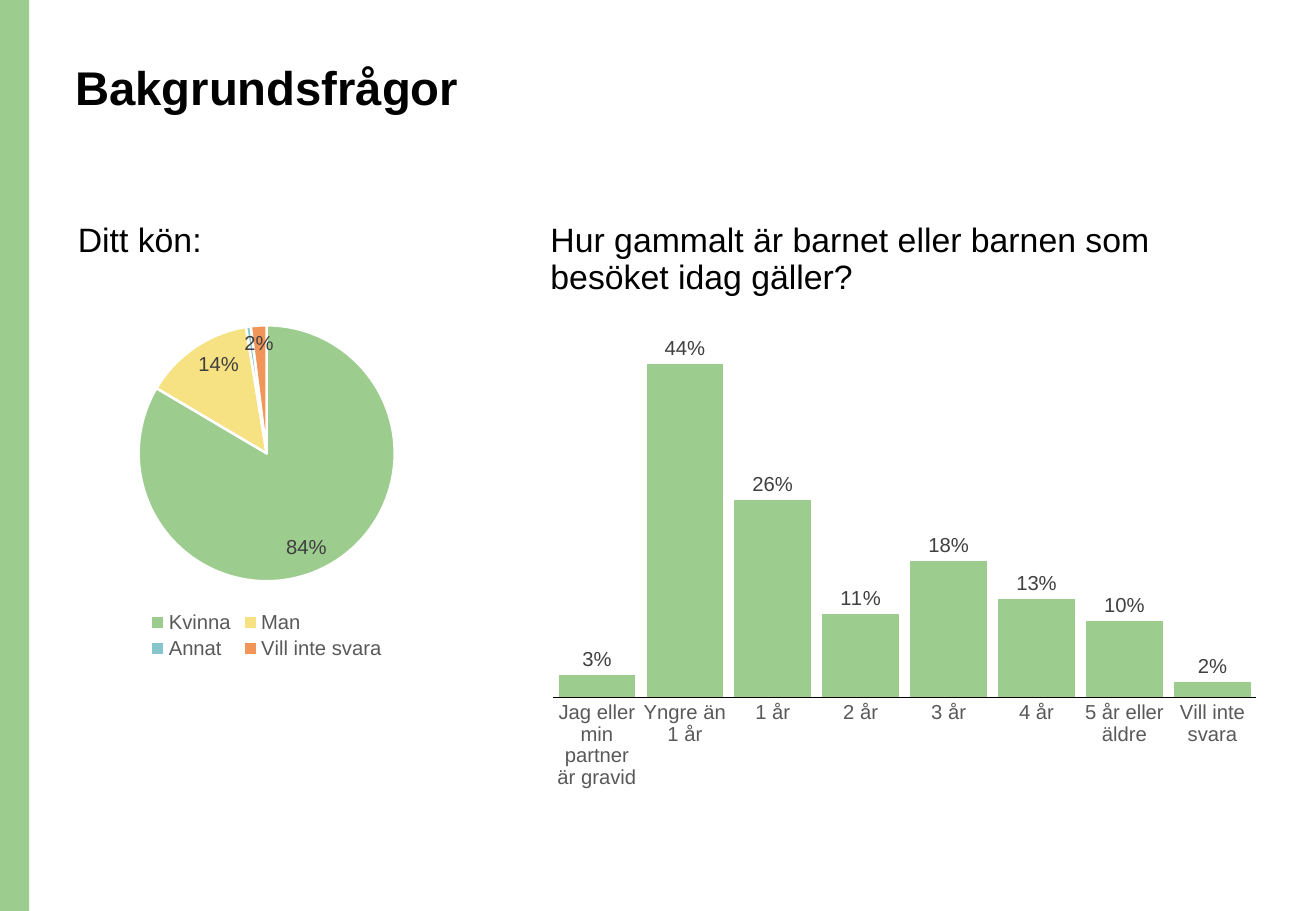
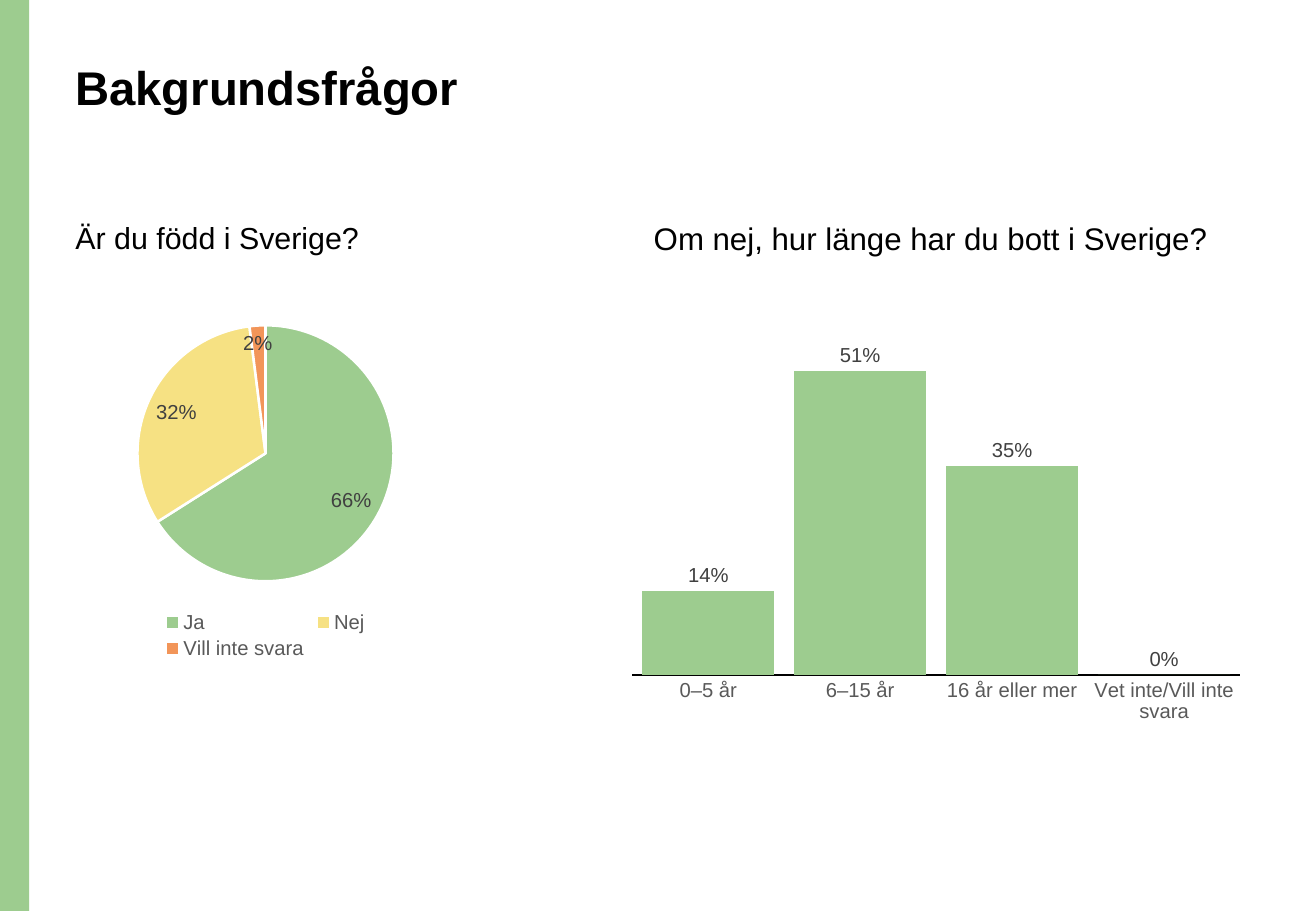
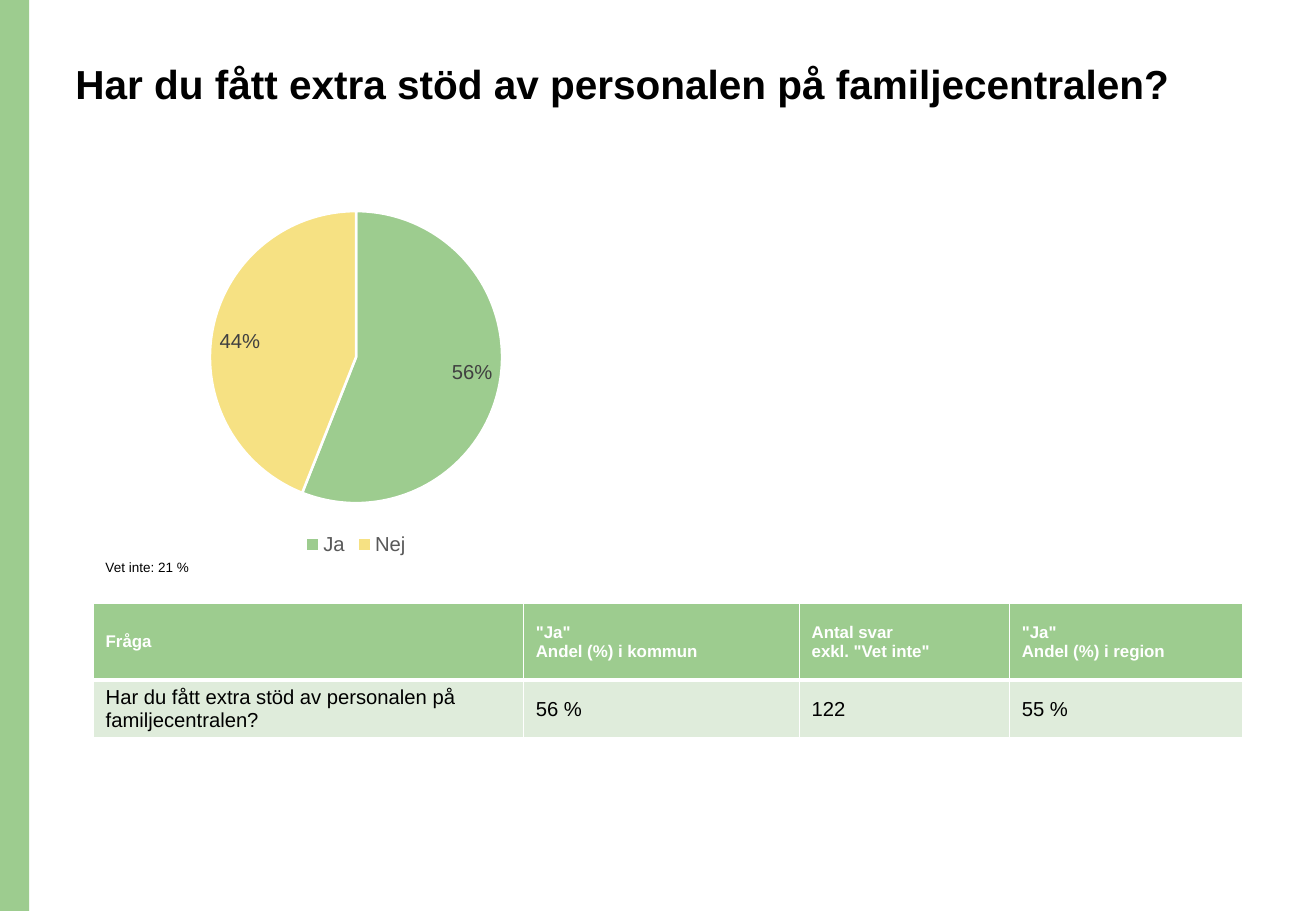
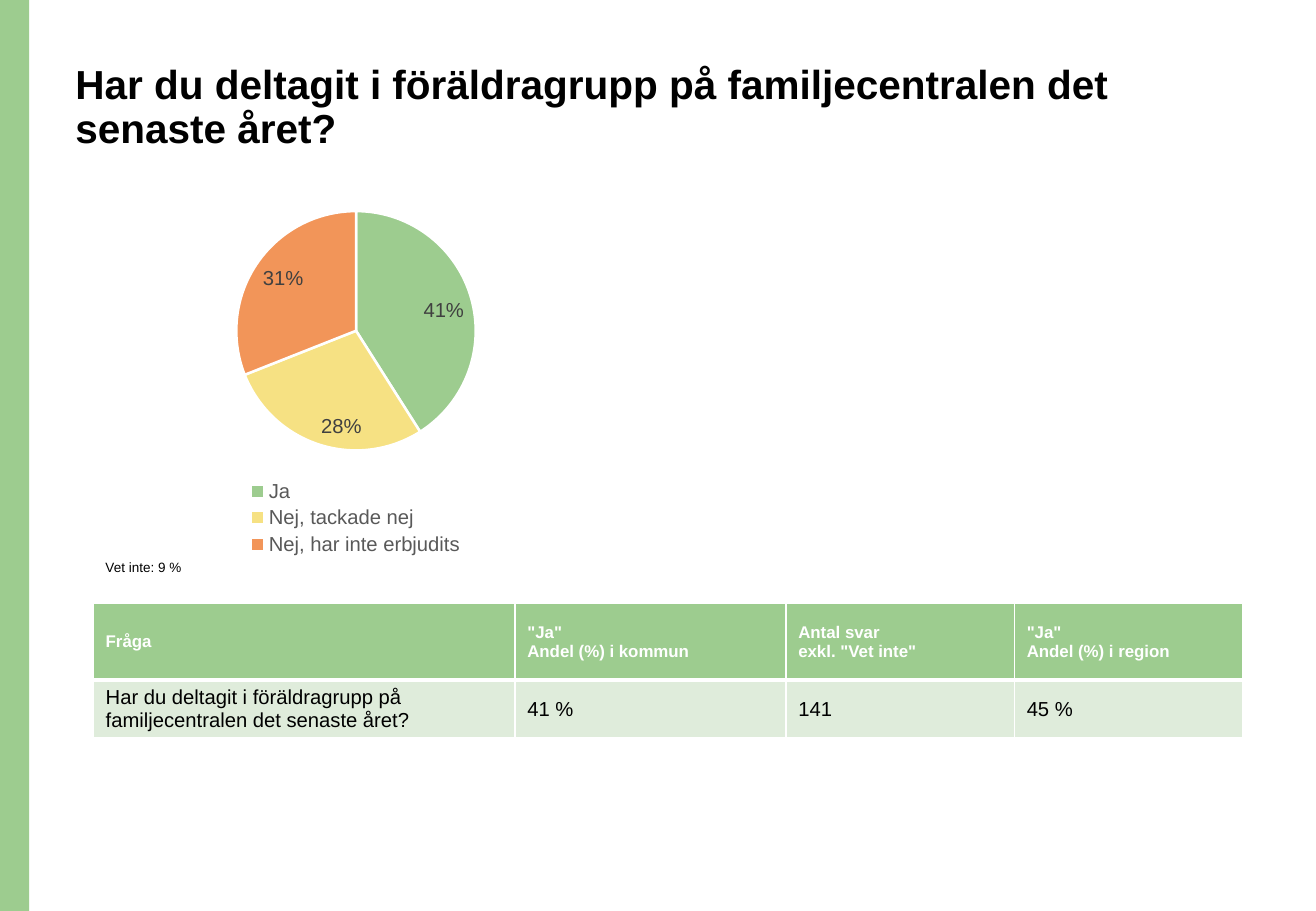
import dataclasses

import lxml.etree
import pptx
import pptx.chart.data
import pptx.dml.color
import pptx.enum.chart
import pptx.enum.shapes
import pptx.enum.text
import pptx.oxml.ns
import pptx.util


@dataclasses.dataclass(frozen=True)
class Theme:
    """Colours, font and type sizes shared by every slide."""
    font: str = "Arial"
    green: str = "9DCC8F"
    pale_green: str = "DFECDB"
    yellow: str = "F6E183"
    blue: str = "85C5CB"
    orange: str = "F29559"
    black: str = "000000"
    white: str = "FFFFFF"
    label_grey: str = "404040"
    axis_grey: str = "595959"
    title: float = 28
    long_title: float = 24
    question: float = 20
    chart_text: float = 12
    chart_base: float = 10
    table_head: float = 10
    table_body: float = 12
    note: float = 8


THEME = Theme()
EMU_PER_PX = 9144
SLIDE_SIZE = (1083, 750)
BAND_BOX = (0, 0, 24, 750)
TITLE_BOX = (52, 48, 934, 102)
COMPARISON_LAYOUT = 4
TITLE_ONLY_LAYOUT = 5
PIE_FORMAT = '[<0.01]"";[>0.01]0%'
TABLE_HEAD = ["Fråga", '"Ja"\nAndel (%) i kommun',
              'Antal svar\nexkl. "Vet inte"', '"Ja"\nAndel (%) i region']


def px(length):
    """Turn px into EMU."""
    return pptx.util.Emu(length * EMU_PER_PX)


def emu_box(box):
    """Turn a px box into EMU lengths."""
    return [px(length) for length in box]


def rgb(colour):
    """Turn a hex string into a colour."""
    return pptx.dml.color.RGBColor.from_string(colour)


def paint(fill, colour):
    """Give a fill one solid colour."""
    fill.solid()
    fill.fore_color.rgb = rgb(colour)


def style_font(font, size, colour, bold=False):
    """Set the shared typeface with a size, colour and weight."""
    font.name = THEME.font
    font.size = pptx.util.Pt(size)
    font.bold = bold
    font.color.rgb = rgb(colour)


def style_frame(frame, size, colour=THEME.black, bold=False, spacing=None, before=None):
    """Format every paragraph and run of a text frame."""
    for paragraph in frame.paragraphs:
        paragraph.alignment = pptx.enum.text.PP_ALIGN.LEFT
        paragraph.line_spacing = spacing
        if before is not None:
            paragraph.space_before = pptx.util.Pt(before)
        for run in paragraph.runs:
            style_font(run.font, size, colour, bold)


def write_text(holder, box, text, size, **style):
    """Place a text holder in its box and fill it with top-anchored text."""
    holder.left, holder.top, holder.width, holder.height = emu_box(box)
    frame = holder.text_frame
    frame.text = text
    frame.word_wrap = True
    frame.auto_size = pptx.enum.text.MSO_AUTO_SIZE.NONE
    frame.vertical_anchor = pptx.enum.text.MSO_ANCHOR.TOP
    style_frame(frame, size, **style)


def add_titled_slide(deck, layout, title, size):
    """Add a slide with the shared title style."""
    slide = deck.slides.add_slide(deck.slide_layouts[layout])
    write_text(slide.shapes.title, TITLE_BOX, title, size, bold=True, spacing=0.9)
    return slide


def move_band_to_master(deck, slide):
    """Draw the green side band and hand it to the slide master."""
    band = slide.shapes.add_shape(pptx.enum.shapes.MSO_SHAPE.RECTANGLE, *emu_box(BAND_BOX))
    band.shadow.inherit = False
    paint(band.fill, THEME.green)
    band.line.fill.background()
    band.element.nvSpPr.cNvPr.set("id", "100")
    deck.slide_master.shapes[0].element.addprevious(band.element)


def add_chart(slide, box, kind, categories, values, number_format, label_position):
    """Add a one-series chart with the shared label style."""
    data = pptx.chart.data.CategoryChartData()
    data.categories = categories
    data.add_series("Series 1", values)
    chart = slide.shapes.add_chart(kind, *emu_box(box), data).chart
    chart.has_title = False
    chart.has_legend = False
    style_font(chart.font, THEME.chart_base, THEME.black)
    plot = chart.plots[0]
    plot.has_data_labels = True
    labels = plot.data_labels
    labels.show_value = True
    labels.show_percentage = False
    labels.number_format = number_format
    labels.number_format_is_linked = False
    labels.position = label_position
    style_font(labels.font, THEME.chart_text, THEME.label_grey)
    return chart


def add_pie(slide, box, slices):
    """Add a pie of (answer, share, colour) slices with a legend below."""
    answers, shares, colours = zip(*slices)
    chart = add_chart(slide, box, pptx.enum.chart.XL_CHART_TYPE.PIE, answers, shares,
                      PIE_FORMAT, pptx.enum.chart.XL_LABEL_POSITION.INSIDE_END)
    chart.has_legend = True
    chart.legend.position = pptx.enum.chart.XL_LEGEND_POSITION.BOTTOM
    chart.legend.include_in_layout = False
    style_font(chart.legend.font, THEME.chart_text, THEME.axis_grey)
    chart.plots[0].vary_by_categories = True
    for index, colour in enumerate(colours):
        wedge = chart.plots[0].series[0].points[index].format
        paint(wedge.fill, colour)
        wedge.line.color.rgb = rgb(THEME.white)
        wedge.line.width = pptx.util.Pt(1.5)


def add_columns(slide, box, bars):
    """Add a column chart of (answer, share) bars without a value axis."""
    answers, shares = zip(*bars)
    chart = add_chart(slide, box, pptx.enum.chart.XL_CHART_TYPE.COLUMN_CLUSTERED, answers, shares,
                      "0%", pptx.enum.chart.XL_LABEL_POSITION.OUTSIDE_END)
    plot = chart.plots[0]
    plot.vary_by_categories = False
    plot.gap_width = 15
    plot.overlap = -27
    paint(plot.series[0].format.fill, THEME.green)
    chart.value_axis.visible = False
    chart.value_axis.has_major_gridlines = False
    chart.value_axis.minimum_scale = 0
    answer_axis = chart.category_axis
    answer_axis.has_major_gridlines = False
    answer_axis.major_tick_mark = pptx.enum.chart.XL_TICK_MARK.NONE
    answer_axis.format.line.color.rgb = rgb(THEME.black)
    answer_axis.format.line.width = pptx.util.Pt(0.75)
    style_font(answer_axis.tick_labels.font, THEME.chart_text, THEME.axis_grey)


def set_borders(cell, widths):
    """Give a cell white borders of the given point widths by side."""
    properties = cell._tc.get_or_add_tcPr()
    for side, width in widths.items():
        border = lxml.etree.SubElement(properties, pptx.oxml.ns.qn(f"a:ln{side}"),
                                       w=str(pptx.util.Pt(width)))
        solid = lxml.etree.SubElement(border, pptx.oxml.ns.qn("a:solidFill"))
        lxml.etree.SubElement(solid, pptx.oxml.ns.qn("a:srgbClr"), val=THEME.white)


def add_result_table(slide, box, column_widths, answers):
    """Add the table that compares municipality and region."""
    table = slide.shapes.add_table(2, len(TABLE_HEAD), *emu_box(box)).table
    table.horz_banding = False
    for column, width in zip(table.columns, column_widths):
        column.width = px(width)
    head_height = 63
    table.rows[0].height = px(head_height)
    table.rows[1].height = px(box[3] - head_height)
    row_styles = [
        (TABLE_HEAD, THEME.green, THEME.table_head, THEME.white, True, dict(L=1, R=1, T=1, B=3)),
        (answers, THEME.pale_green, THEME.table_body, THEME.black, False, dict(L=1, R=1, T=3, B=1)),
    ]
    for row, (texts, fill, size, colour, bold, borders) in zip(table.rows, row_styles):
        for cell, text in zip(row.cells, texts):
            cell.text_frame.text = text
            cell.vertical_anchor = pptx.enum.text.MSO_ANCHOR.MIDDLE
            style_frame(cell.text_frame, size, colour, bold)
            set_borders(cell, borders)
            paint(cell.fill, fill)


def build_background_slide(deck, pie, columns):
    """Build a slide with a pie question on the left and a column question on the right."""
    slide = add_titled_slide(deck, COMPARISON_LAYOUT, "Bakgrundsfrågor", THEME.title)
    left_holder, left_content, right_holder, right_content = list(slide.placeholders)[1:]
    for content in (left_content, right_content):
        content.element.getparent().remove(content.element)
    for holder, part in ((left_holder, pie), (right_holder, columns)):
        write_text(holder, part["question_box"], part["question"], part["size"],
                   spacing=0.9, before=10)
    add_pie(slide, pie["chart_box"], pie["slices"])
    add_columns(slide, columns["chart_box"], columns["bars"])
    return slide


def build_result_slide(deck, question, slices, unsure, column_widths, figures):
    """Build a slide with a pie, a note and a result table for one question."""
    slide = add_titled_slide(deck, TITLE_ONLY_LAYOUT, question, THEME.long_title)
    add_pie(slide, (122, 160, 342, 301), slices)
    add_result_table(slide, (77, 497, 946, 93), column_widths, [question, *figures])
    note_box = (77, 449, 210, 48)
    note = slide.shapes.add_textbox(*emu_box(note_box))
    write_text(note, note_box, f"Vet inte: {unsure} %", THEME.note, spacing=1.5)


def main():
    """Build and save the deck."""
    deck = pptx.Presentation()
    deck.slide_width, deck.slide_height = emu_box(SLIDE_SIZE)
    first = build_background_slide(
        deck,
        pie=dict(question="Ditt kön:", size=THEME.question,
                 question_box=(54, 179, 458, 46), chart_box=(53, 254, 333, 293),
                 slices=[("Kvinna", 0.84, THEME.green), ("Man", 0.14, THEME.yellow),
                         ("Annat", 0.006, THEME.blue), ("Vill inte svara", 0.02, THEME.orange)]),
        columns=dict(question="Hur gammalt är barnet eller barnen som besöket idag gäller?",
                     size=THEME.question,
                     question_box=(443, 179, 603, 74), chart_box=(443, 254, 603, 403),
                     bars=[("Jag eller min partner är gravid", 0.03), ("Yngre än 1 år", 0.44),
                           ("1 år", 0.26), ("2 år", 0.11), ("3 år", 0.18), ("4 år", 0.13),
                           ("5 år eller äldre", 0.1), ("Vill inte svara", 0.02)]))
    move_band_to_master(deck, first)
    build_background_slide(
        deck,
        pie=dict(question="Är du född i Sverige?", size=18,
                 question_box=(52, 179, 458, 46), chart_box=(52, 254, 333, 293),
                 slices=[("Ja", 0.66, THEME.green), ("Nej", 0.32, THEME.yellow),
                         ("Vill inte svara", 0.02, THEME.orange)]),
        columns=dict(question="Om nej, hur länge har du bott i Sverige?", size=18.5,
                     question_box=(528, 179, 503, 58), chart_box=(510, 254, 521, 348),
                     bars=[("0–5 år", 0.14), ("6–15 år", 0.51), ("16 år eller mer", 0.35),
                           ("Vet inte/Vill inte svara", 0)]))
    build_result_slide(
        deck, "Har du fått extra stöd av personalen på familjecentralen?",
        [("Ja", 0.56, THEME.green), ("Nej", 0.44, THEME.yellow)],
        21, (354, 227, 173, 192), ["56 %", "122", "55 %"])
    build_result_slide(
        deck, "Har du deltagit i föräldragrupp på familjecentralen det senaste året?",
        [("Ja", 0.41, THEME.green), ("Nej, tackade nej", 0.28, THEME.yellow),
         ("Nej, har inte erbjudits", 0.31, THEME.orange)],
        9, (347, 223, 188, 188), ["41 %", "141", "45 %"])
    deck.save("out.pptx")


if __name__ == "__main__":
    main()
